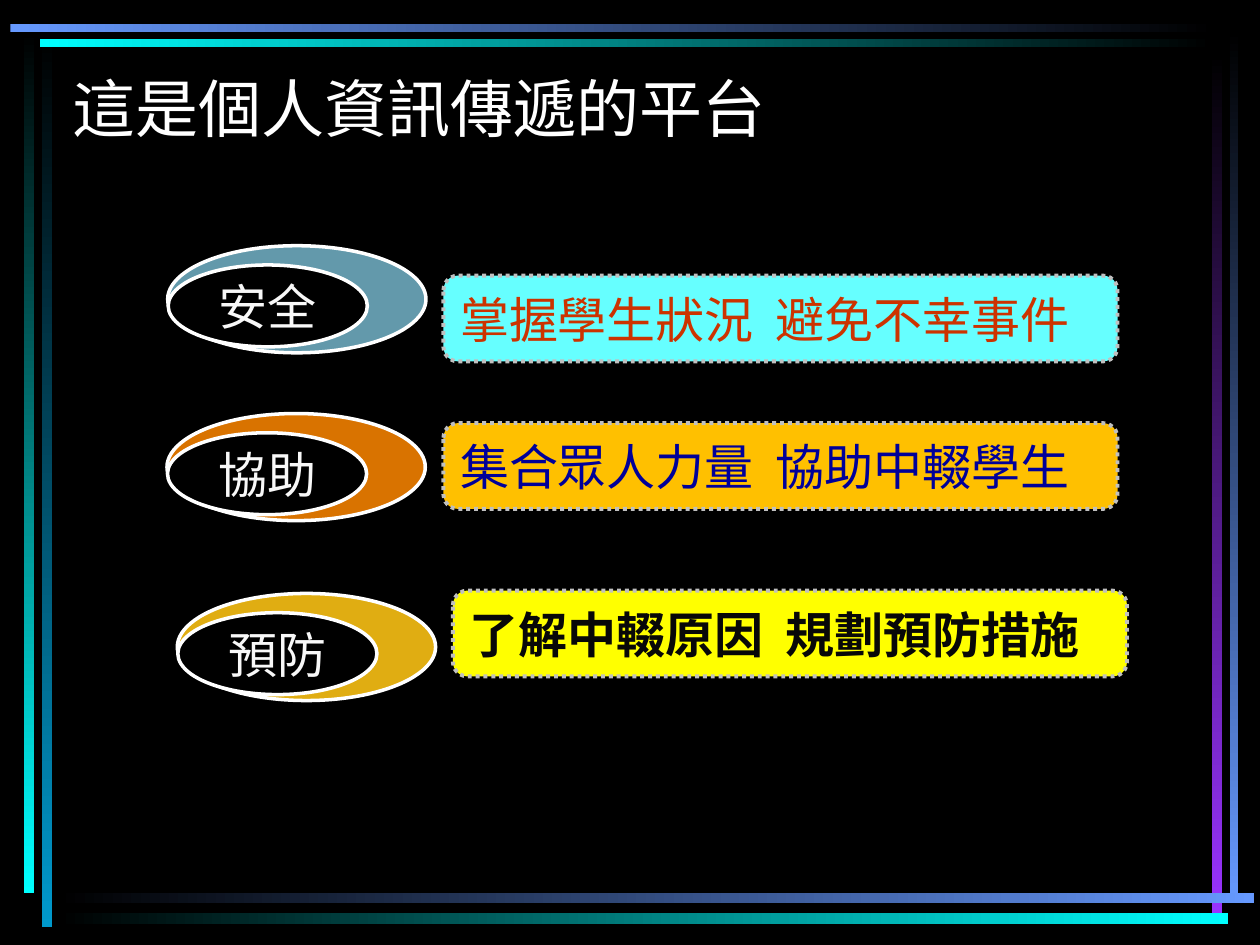
from pptx import Presentation
from pptx.dml.color import RGBColor
from pptx.enum.dml import MSO_LINE
from pptx.enum.shapes import MSO_SHAPE as Shape
from pptx.enum.text import MSO_ANCHOR as Anchor, PP_ALIGN as Align
from pptx.util import Pt

BLACK, WHITE = "000000", "FFFFFF"
BLUE, CYAN, PURPLE, TEAL = "6699FF", "00FFFF", "9933FF", "0099CC"
ACROSS, DOWN = 0, 270

BARS = [
    (23.8, 20.2, 5.8, 509.8, BLACK, TEAL, DOWN),
    (13.7, 18, 5.8, 492.5, BLACK, CYAN, DOWN),
    (702.7, 17.3, 5, 499, BLACK, BLUE, DOWN),
    (692.6, 30.2, 6, 491.8, BLACK, PURPLE, DOWN),
    (32.4, 510.2, 684, 6, BLACK, BLUE, ACROSS),
    (32.4, 522, 669.6, 6, BLACK, CYAN, ACROSS),
    (23, 22.3, 671, 4.5, CYAN, BLACK, ACROSS),
    (6, 13.5, 688.3, 5, BLUE, BLACK, ACROSS),
]

ROWS = [
    ("安全", 95.8, 140.4, "6399AB",
     "掌握學生狀況  避免不幸事件", 253.4, 157.5, "66FFFF", "CC3300", False),
    ("協助", 95.4, 236.3, "D97300",
     "集合眾人力量  協助中輟學生", 253.4, 241.8, "FFC000", "000099", False),
    ("預防", 101.3, 339.1, "E0AD12",
     "了解中輟原因  規劃預防措施", 258.8, 337.5, "FFFF00", "080808", True),
]


def color(value):
    return RGBColor.from_string(value)


def add_box(page, kind, left, top, width, height):
    box = page.shapes.add_shape(kind, Pt(left), Pt(top), Pt(width), Pt(height))
    box.shadow.inherit = False
    return box


def paint(box, fill, line, weight):
    box.fill.solid()
    box.fill.fore_color.rgb = color(fill)
    box.line.color.rgb = color(line)
    box.line.width = Pt(weight)


def write(box, text, size, font, shade, align=Align.LEFT, bold=False):
    frame = box.text_frame
    frame.word_wrap = True
    frame.vertical_anchor = Anchor.MIDDLE
    para = frame.paragraphs[0]
    para.text = text
    para.alignment = align
    para.font.size = Pt(size)
    para.font.name = font
    para.font.bold = bold
    para.font.color.rgb = color(shade)


def add_bar(page, left, top, width, height, start, end, angle):
    bar = add_box(page, Shape.RECTANGLE, left, top, width, height)
    bar.line.fill.background()
    bar.fill.gradient()
    bar.fill.gradient_angle = angle
    for stop, shade in zip(bar.fill.gradient_stops, (start, end)):
        stop.color.rgb = color(shade)


def add_badge(page, text, left, top, fill):
    ring = add_box(page, Shape.OVAL, left, top, 147.6, 61.2)
    paint(ring, fill, WHITE, 2)
    core = add_box(page, Shape.OVAL, left + 0.3, top + 11, 113.8, 46.8)
    paint(core, BLACK, WHITE, 2)
    frame = core.text_frame
    frame.margin_left = frame.margin_right = Pt(3.6)
    frame.margin_top = frame.margin_bottom = Pt(3.6)
    write(core, text, 28, "Noto Sans CJK SC", "F8F8F8", Align.CENTER)


def add_panel(page, text, left, top, fill, shade, bold):
    panel = add_box(page, Shape.ROUNDED_RECTANGLE, left, top, 385.2, 49)
    panel.adjustments[0] = 0.17
    paint(panel, fill, "C0C0C0", 2.25)
    panel.line.dash_style = MSO_LINE.ROUND_DOT
    write(panel, text, 28, "Arial", shade, bold=bold)


def add_title(page, text):
    title = page.shapes.title
    title.left, title.top, title.width, title.height = Pt(34), Pt(16.5), Pt(648), Pt(90)
    write(title, text, 36, "Roboto", WHITE)


def main():
    deck = Presentation()
    deck.slide_width, deck.slide_height = Pt(720), Pt(540)
    page = deck.slides.add_slide(deck.slide_layouts[5])
    page.background.fill.solid()
    page.background.fill.fore_color.rgb = color(BLACK)
    for bar in BARS:
        add_bar(page, *bar)
    add_title(page, "這是個人資訊傳遞的平台")
    for row in ROWS:
        add_badge(page, *row[:4])
        add_panel(page, *row[4:])
    deck.save("out.pptx")


if __name__ == "__main__":
    main()
